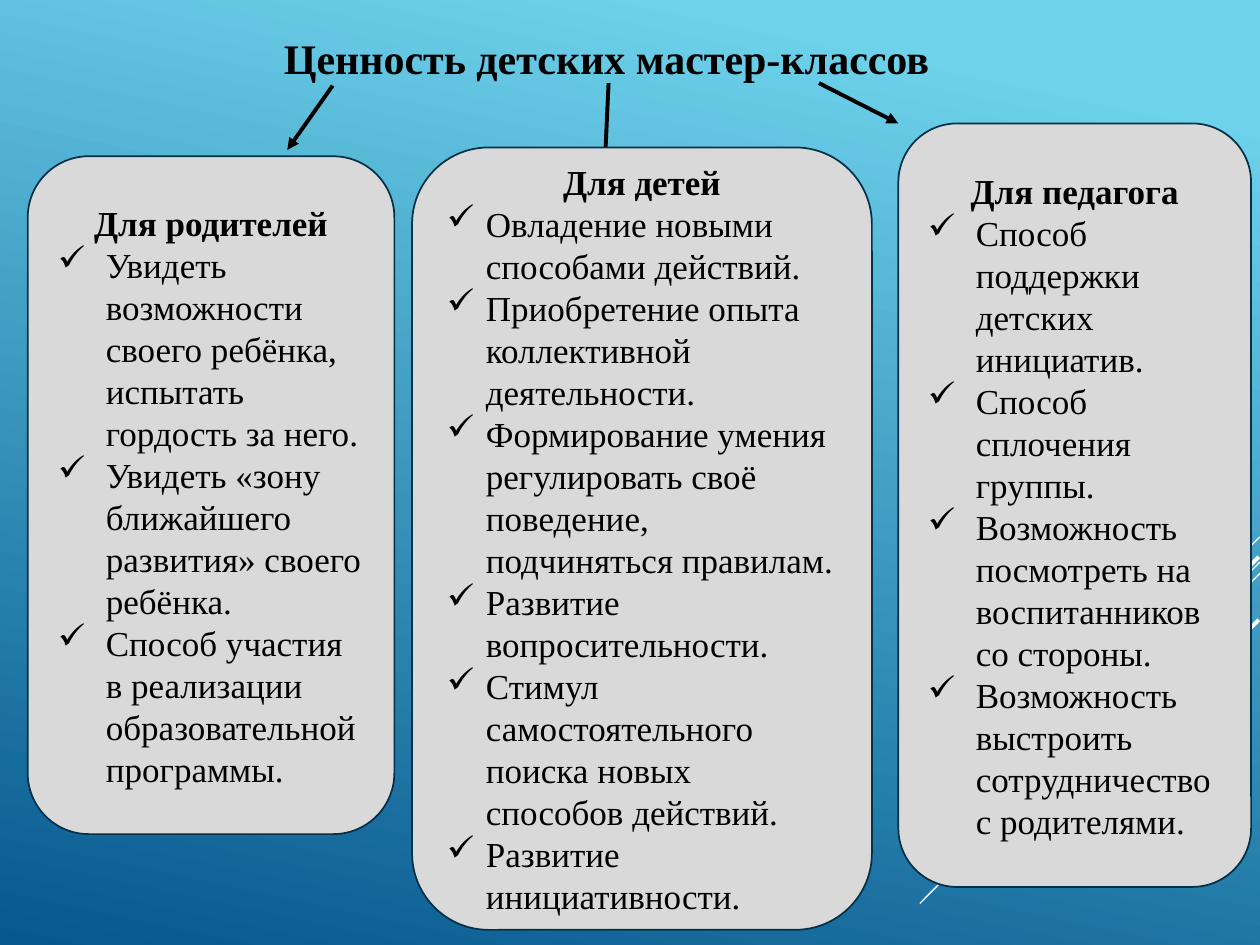
import pptx
import pptx.util
import pptx.dml.color
import pptx.enum.shapes
import pptx.enum.text
import pptx.oxml.ns
import lxml.etree

Inches, Pt = pptx.util.Inches, pptx.util.Pt
ALIGN = pptx.enum.text.PP_ALIGN
FONT = "Times New Roman"


def paint(color_format, hex_color):
    color_format.rgb = pptx.dml.color.RGBColor.from_string(hex_color)


def add_line(start, end, hex_color, width, arrow=False):
    line = slide.shapes.add_connector(
        pptx.enum.shapes.MSO_CONNECTOR.STRAIGHT,
        *[Inches(v) for v in (*start, *end)])
    paint(line.line.color, hex_color)
    line.line.width = Pt(width)
    if arrow:
        lxml.etree.SubElement(line.line._get_or_add_ln(),
                              pptx.oxml.ns.qn("a:tailEnd"), type="triangle")
    lxml.etree.SubElement(line._element.spPr, pptx.oxml.ns.qn("a:effectLst"))


deck = pptx.Presentation()
deck.slide_width, deck.slide_height = Inches(10), Inches(7.5)
slide = deck.slides.add_slide(deck.slide_layouts[6])

# Blue gradient background
sky = slide.background.fill
sky.gradient()
sky.gradient_angle = 360 - 102
for stop, (position, color) in zip(sky.gradient_stops,
                                   [(0.1, "6ED2EB"), (1, "06588E")]):
    stop.position = position
    paint(stop.color, color)

# Diagonal strokes at the right edge
for start, end, width in [
    ((10, 4.26), (9.17, 5.09), 0.75),
    ((10, 4.46), (7.3, 7.17), 0.75),
    ((10, 4.55), (8.28, 6.27), 0.75),
    ((9.99, 4.42), (8.42, 5.99), 2.25),
    ((9.99, 4.92), (8.85, 6.06), 2.25),
]:
    add_line(start, end, "FFFFFF", width)

# Title
title = slide.shapes.add_textbox(Inches(1.93), Inches(0.21),
                                 Inches(5.77), Inches(0.5)).text_frame
title.word_wrap = True
title.paragraphs[0].alignment = ALIGN.CENTER
heading = title.paragraphs[0].add_run()
heading.text = "Ценность детских мастер-классов"
heading.font.name, heading.font.size, heading.font.bold = FONT, Pt(24), True
paint(heading.font.color, "000000")

# Arrows from the title to the three cards
for start, end in [((2.64, 0.68), (2.28, 1.19)),
                   ((4.83, 0.66), (4.8, 1.31)),
                   ((6.5, 0.66), (7.13, 0.98))]:
    add_line(start, end, "000000", 2.25, arrow=True)

# Cards: place, bullet indent, heading, points
cards = [
    ((0.22, 1.24, 2.91, 5.38), 0.38, "Для родителей", [
        "Увидеть возможности своего ребёнка, испытать гордость за него.",
        "Увидеть «зону ближайшего развития» своего ребёнка.",
        "Способ участия в реализации образовательной программы.",
    ]),
    ((3.27, 1.17, 3.65, 6.21), 0.31, "Для детей", [
        "Овладение новыми способами действий.",
        "Приобретение опыта коллективной деятельности.",
        "Формирование умения регулировать своё поведение, подчиняться правилам.",
        "Развитие вопросительности.",
        "Стимул самостоятельного поиска новых способов действий.",
        "Развитие инициативности.",
    ]),
    ((7.13, 0.98, 2.8, 6.06), 0.38, "Для педагога", [
        "Способ поддержки детских инициатив.",
        "Способ сплочения группы.",
        "Возможность посмотреть на воспитанников со стороны.",
        "Возможность выстроить сотрудничество с родителями.",
    ]),
]
for place, indent, audience, points in cards:
    card = slide.shapes.add_shape(
        pptx.enum.shapes.MSO_SHAPE.ROUNDED_RECTANGLE,
        *[Inches(v) for v in place])
    card.shadow.inherit = False
    card.fill.solid()
    paint(card.fill.fore_color, "D9D9D9")
    paint(card.line.color, "043148")
    card.line.width = Pt(1)
    frame = card.text_frame
    frame.word_wrap = True
    frame.vertical_anchor = pptx.enum.text.MSO_ANCHOR.MIDDLE

    for i, text in enumerate([audience, *points]):
        paragraph = frame.add_paragraph() if i else frame.paragraphs[0]
        paragraph.alignment = ALIGN.LEFT if i else ALIGN.CENTER
        if i:
            props = paragraph._p.get_or_add_pPr()
            props.set("marL", str(Inches(indent)))
            props.set("indent", str(-Inches(indent)))
            lxml.etree.SubElement(props, pptx.oxml.ns.qn("a:buChar"), char="✓")
        run = paragraph.add_run()
        run.text = text
        run.font.name, run.font.size, run.font.bold = FONT, Pt(20), i == 0
        paint(run.font.color, "000000")

deck.save("out.pptx")
